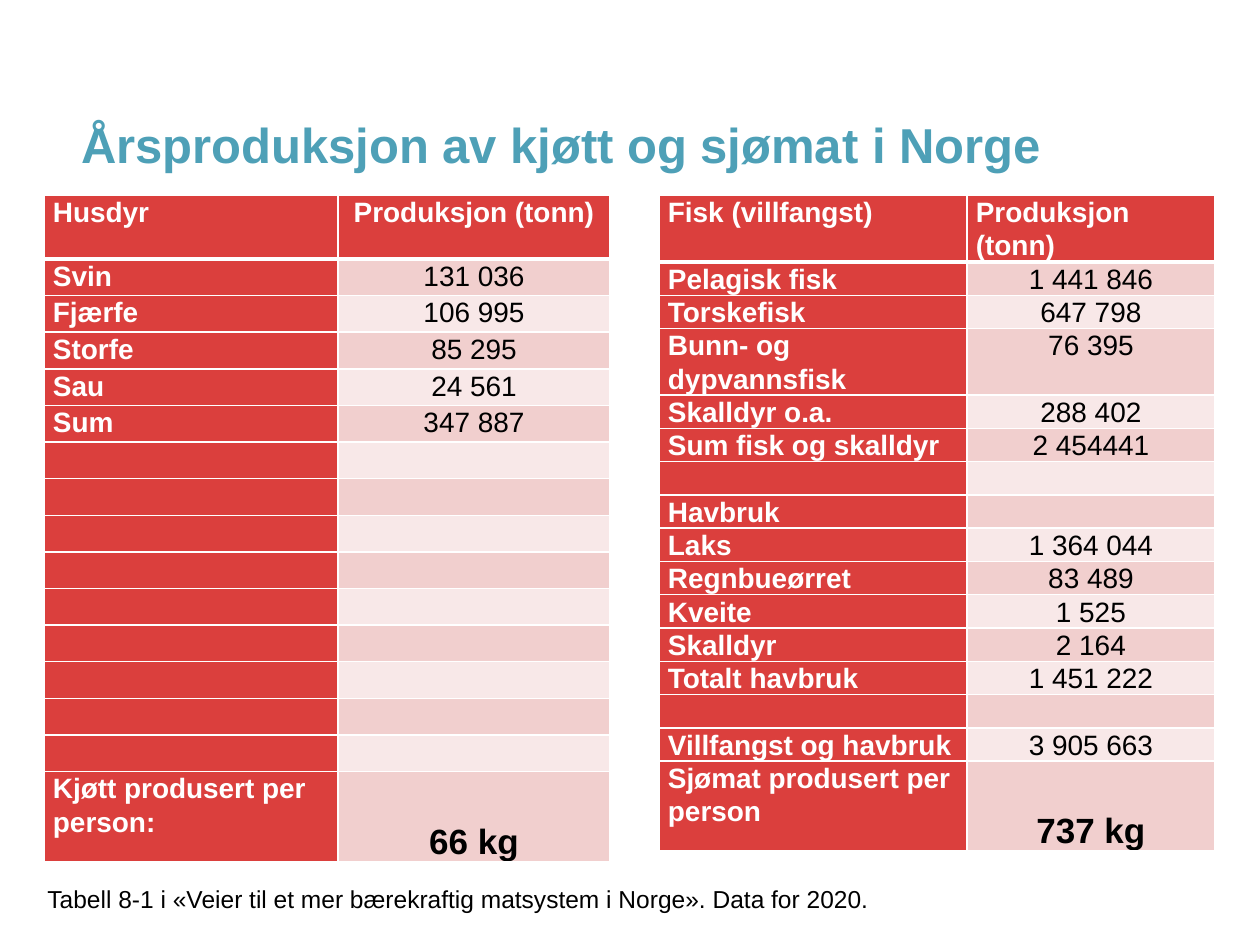
from dataclasses import dataclass
from lxml.etree import SubElement
from pptx import Presentation
from pptx.dml.color import RGBColor
from pptx.enum.text import MSO_ANCHOR, PP_ALIGN
from pptx.oxml.ns import qn
from pptx.util import Emu, Pt


@dataclass(frozen=True)
class Theme:
    font: str = "Arial"
    title: str = "4EA0B7"
    red: str = "DB3F3D"
    bands: tuple = ("F1CFCE", "F8E8E8")
    white: str = "FFFFFF"
    black: str = "000000"
    title_pt: int = 28
    total_pt: int = 20
    cell_pt: int = 16
    note_pt: int = 14


T = Theme()
PX = 914400 // 126

TITLE = "Årsproduksjon av kjøtt og sjømat i Norge"
NOTE = "Tabell 8-1 i «Veier til et mer bærekraftig matsystem i Norge». Data for 2020."
EMPTY = ("", "")
MEAT = [
    ("Husdyr", "Produksjon (tonn)"),
    ("Svin", "131 036"),
    ("Fjærfe", "106 995"),
    ("Storfe", "85 295"),
    ("Sau", "24 561"),
    ("Sum", "347 887"),
    *[EMPTY] * 9,
    ("Kjøtt produsert per person:", "66 kg"),
]
SEAFOOD = [
    ("Fisk (villfangst)", "Produksjon (tonn)"),
    ("Pelagisk fisk", "1 441 846"),
    ("Torskefisk", "647 798"),
    ("Bunn- og dypvannsfisk", "76 395"),
    ("Skalldyr o.a.", "288 402"),
    ("Sum fisk og skalldyr", "2 454441"),
    EMPTY,
    ("Havbruk", ""),
    ("Laks", "1 364 044"),
    ("Regnbueørret", "83 489"),
    ("Kveite", "1 525"),
    ("Skalldyr", "2 164"),
    ("Totalt havbruk", "1 451 222"),
    EMPTY,
    ("Villfangst og havbruk", "3 905 663"),
    ("Sjømat produsert per person", "737 kg"),
]
TABLES = [
    dict(rows=MEAT, left=44, cols=(294, 272), head=64, body=513,
         double=(), head_align=PP_ALIGN.CENTER),
    dict(rows=SEAFOOD, left=659, cols=(308, 248), head=67, body=499,
         double=(3,), head_align=PP_ALIGN.LEFT),
]
TABLE_TOP = 195
TOTAL_H = 90


def px(n):
    return Emu(round(n * PX))


def style(p, size, color, bold=False):
    p.font.name = T.font
    p.font.size = Pt(size)
    p.font.bold = bold
    p.font.color.rgb = RGBColor.from_string(color)


def set_borders(cell, is_head):
    tcPr = cell._tc.get_or_add_tcPr()
    for i, side in enumerate(("lnL", "lnR", "lnT", "lnB")):
        width = 3 if is_head and side == "lnB" else 1
        ln = SubElement(tcPr, qn(f"a:{side}"), w=str(Pt(width)))
        fill = SubElement(ln, qn("a:solidFill"))
        SubElement(fill, qn("a:srgbClr"), val=T.white)
        tcPr.remove(ln)
        tcPr.insert(i, ln)


def fill_cell(cell, text, fill, color, size, bold, align):
    cell.fill.solid()
    cell.fill.fore_color.rgb = RGBColor.from_string(fill)
    cell.margin_left = cell.margin_right = px(9)
    cell.margin_top = cell.margin_bottom = 0
    p = cell.text_frame.paragraphs[0]
    if text:
        p.text = text
        p.alignment = align
        p.line_spacing = 1.07
    else:
        SubElement(p._p, qn("a:endParaRPr"), sz=str(size * 100))
    style(p, size, color, bold)


def add_data_table(s, rows, left, cols, head, body, double, head_align):
    last = len(rows) - 1
    unit = body / (last - 1 + len(double))
    heights = [head] + [unit * (1 + (r in double)) for r in range(1, last)] + [TOTAL_H]
    shape = s.shapes.add_table(len(rows), len(cols), px(left), px(TABLE_TOP),
                               px(sum(cols)), px(sum(heights)))
    table = shape.table
    for col, width in zip(table.columns, cols):
        col.width = px(width)
    for r, (row, height) in enumerate(zip(rows, heights)):
        table.rows[r].height = px(height)
        for c, text in enumerate(row):
            cell = table.cell(r, c)
            is_red = r == 0 or c == 0
            is_total = r == last and c == 1
            align = PP_ALIGN.LEFT if c == 0 else head_align if r == 0 else PP_ALIGN.CENTER
            fill_cell(cell, text,
                      T.red if is_red else T.bands[(r - 1) % 2],
                      T.white if is_red else T.black,
                      T.total_pt if is_total else T.cell_pt,
                      is_red or is_total, align)
            if is_total:
                cell.vertical_anchor = MSO_ANCHOR.BOTTOM
            set_borders(cell, r == 0)


def add_text(s, text, box, size, color, bold=False, wrap=True):
    tf = s.shapes.add_textbox(*map(px, box)).text_frame
    tf.word_wrap = wrap
    p = tf.paragraphs[0]
    p.text = text
    style(p, size, color, bold)
    return tf


def main():
    prs = Presentation()
    prs.slide_width, prs.slide_height = px(1260), px(945)
    s = prs.slides.add_slide(prs.slide_layouts[6])
    for spec_table in TABLES:
        add_data_table(s, **spec_table)
    add_text(s, NOTE, (35, 878, 850, 43), T.note_pt, T.black, wrap=False)
    tf = add_text(s, TITLE, (5, 108, 1221, 128), T.title_pt, T.title, bold=True)
    tf.margin_left = px(76)
    prs.save("out.pptx")


if __name__ == "__main__":
    main()
